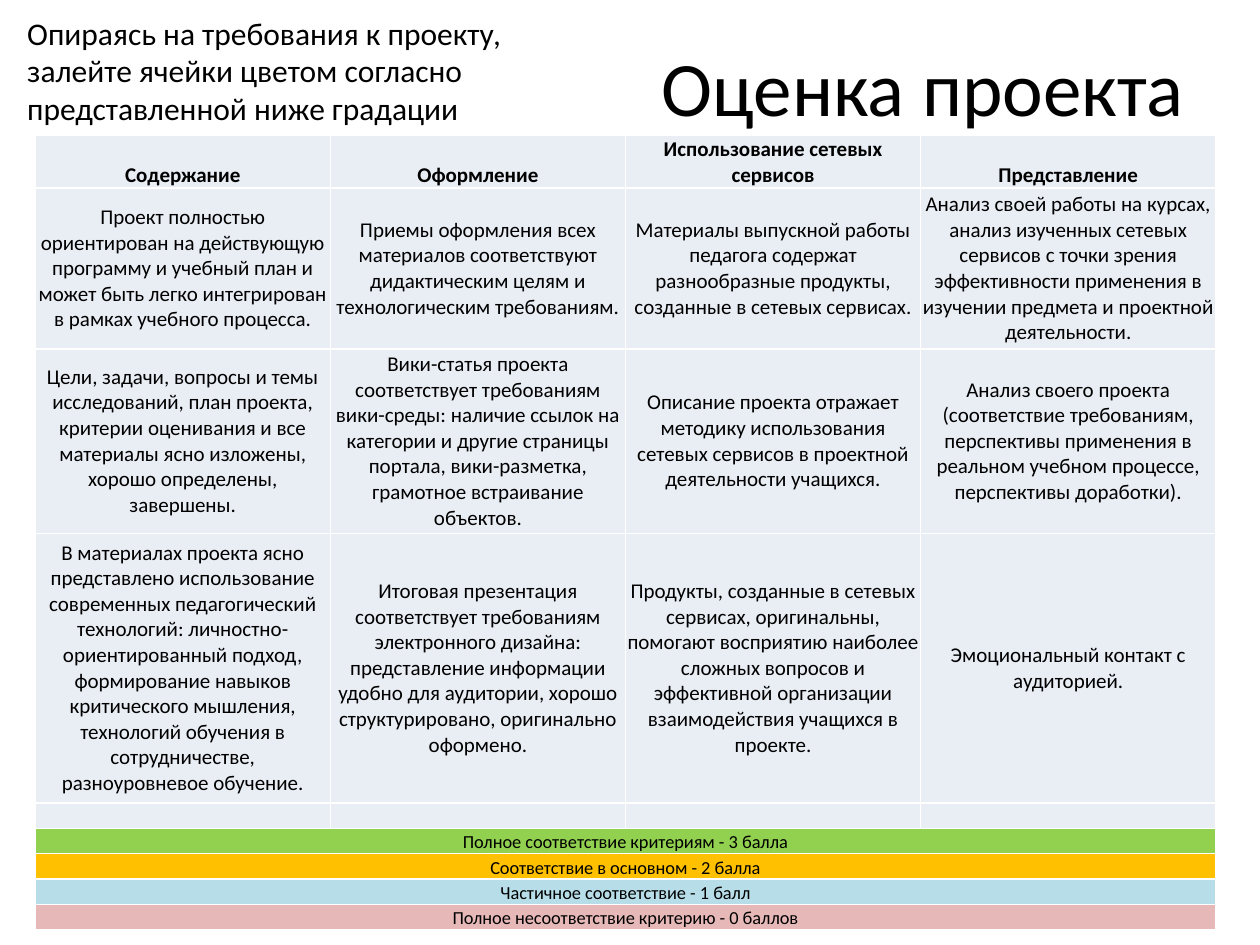
from lxml.etree import SubElement
from pptx import Presentation
from pptx.dml.color import RGBColor
from pptx.enum.text import MSO_ANCHOR, PP_ALIGN
from pptx.oxml.ns import qn
from pptx.util import Cm, Pt

INTRO = ("Опираясь на требования к проекту, залейте ячейки цветом "
         "согласно представленной ниже градации")
HEADS = ["Содержание", "Оформление", "Использование сетевых сервисов",
         "Представление"]
RULES = [
    ["Проект полностью ориентирован на действующую программу и учебный план "
     "и может быть легко интегрирован в рамках учебного процесса.",
     "Приемы оформления всех материалов соответствуют дидактическим целям "
     "и технологическим требованиям.",
     "Материалы выпускной работы педагога содержат разнообразные продукты, "
     "созданные в сетевых сервисах.",
     "Анализ своей работы на курсах, анализ изученных сетевых сервисов с точки "
     "зрения эффективности применения в изучении предмета и проектной "
     "деятельности."],
    ["Цели, задачи, вопросы и темы исследований, план проекта, критерии "
     "оценивания и все материалы ясно изложены, хорошо определены, завершены.",
     "Вики-статья проекта соответствует требованиям вики-среды: наличие ссылок "
     "на категории и другие страницы портала, вики-разметка, грамотное "
     "встраивание объектов.",
     "Описание проекта отражает методику использования сетевых сервисов "
     "в проектной деятельности учащихся.",
     "Анализ своего проекта (соответствие требованиям, перспективы применения "
     "в реальном учебном процессе, перспективы доработки)."],
    ["В материалах проекта ясно представлено использование современных "
     "педагогический технологий: личностно-ориентированный подход, "
     "формирование навыков критического мышления, технологий обучения "
     "в сотрудничестве, разноуровневое обучение.",
     "Итоговая презентация соответствует требованиям электронного дизайна: "
     "представление информации удобно для аудитории, хорошо структурировано, "
     "оригинально оформено.",
     "Продукты, созданные в сетевых сервисах, оригинальны, помогают восприятию "
     "наиболее сложных вопросов и эффективной организации взаимодействия "
     "учащихся в проекте.",
     "Эмоциональный контакт с аудиторией."],
]
GRADES = [("Полное соответствие критериям - 3 балла", "92D050"),
          ("Соответствие в основном - 2 балла", "FFC000"),
          ("Частичное соответствие - 1 балл", "B7DEE8"),
          ("Полное несоответствие критерию - 0 баллов", "E6B9B8")]
PALE = "E9EDF4"
HEIGHTS = [1.07, 3.25, 3.71, 5.44] + [0.51] * 5


def color(code):
    return RGBColor.from_string(code)


def write(frame, text, size, align, bold=False):
    frame.word_wrap = True
    para = frame.paragraphs[0]
    para.alignment = align
    font = para.font
    font.name, font.size, font.bold = "Calibri", Pt(size), bold
    font.color.rgb = color("000000")
    if text:
        para.add_run().text = text
    else:
        para._p.get_or_add_endParaRPr().set("sz", str(int(size * 100)))


def add_text(slide, box, text, size, align, anchor):
    frame = slide.shapes.add_textbox(*map(Cm, box)).text_frame
    frame.vertical_anchor = anchor
    write(frame, text, size, align)


def edge(cell):
    """Draw thin white borders; call before the fill is set."""
    props = cell._tc.get_or_add_tcPr()
    for side in ("lnL", "lnR", "lnT", "lnB"):
        line = SubElement(props, qn(f"a:{side}"), w=str(Pt(1)))
        fill = SubElement(line, qn("a:solidFill"))
        SubElement(fill, qn("a:srgbClr"), val="FFFFFF")


def style(cell, fill, anchor):
    edge(cell)
    cell.fill.solid()
    cell.fill.fore_color.rgb = color(fill)
    cell.vertical_anchor = anchor
    cell.margin_left = cell.margin_right = 0
    cell.margin_top = cell.margin_bottom = 0


def add_rubric(slide, left, top, width):
    cols = len(HEADS)
    table = slide.shapes.add_table(
        len(HEIGHTS), cols, Cm(left), Cm(top), Cm(width),
        Cm(sum(HEIGHTS))).table
    table.first_row = table.horz_banding = False
    for row, height in zip(table.rows, HEIGHTS):
        row.height = Cm(height)
    for col in table.columns:
        col.width = Cm(width / cols)

    blank = [""] * cols
    for r, texts in enumerate([HEADS, *RULES, blank]):
        head = r == 0
        for c, text in enumerate(texts):
            cell = table.cell(r, c)
            style(cell, PALE, MSO_ANCHOR.BOTTOM if head else MSO_ANCHOR.MIDDLE)
            write(cell.text_frame, text, 12 if text else 10.5,
                  PP_ALIGN.CENTER, head)

    start = len(HEIGHTS) - len(GRADES)
    for r, (text, fill) in enumerate(GRADES, start):
        for c in range(cols):
            style(table.cell(r, c), fill, MSO_ANCHOR.BOTTOM)
            write(table.cell(r, c).text_frame, "" if c else text, 10.5,
                  PP_ALIGN.CENTER)
        table.cell(r, 0).merge(table.cell(r, cols - 1))


def main():
    deck = Presentation()
    deck.slide_width, deck.slide_height = Cm(25.4), Cm(19.05)
    slide = deck.slides.add_slide(deck.slide_layouts[6])
    add_text(slide, (1.27, 0.13, 22.86, 3.18), "Оценка проекта", 44,
             PP_ALIGN.RIGHT, MSO_ANCHOR.MIDDLE)
    add_rubric(slide, 0.71, 2.72, 23.8)
    add_text(slide, (0.3, 0.15, 12.19, 2.57), INTRO, 18,
             PP_ALIGN.LEFT, MSO_ANCHOR.TOP)
    deck.save("out.pptx")


if __name__ == "__main__":
    main()
